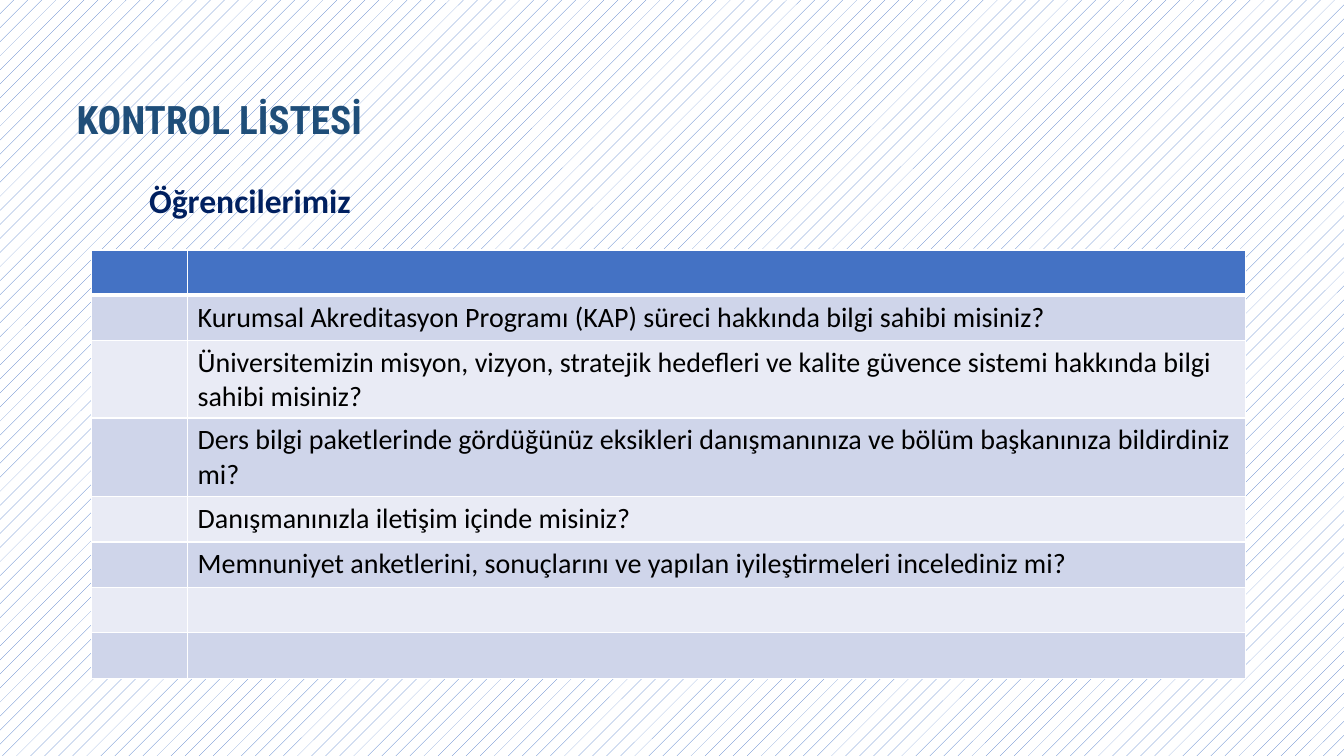
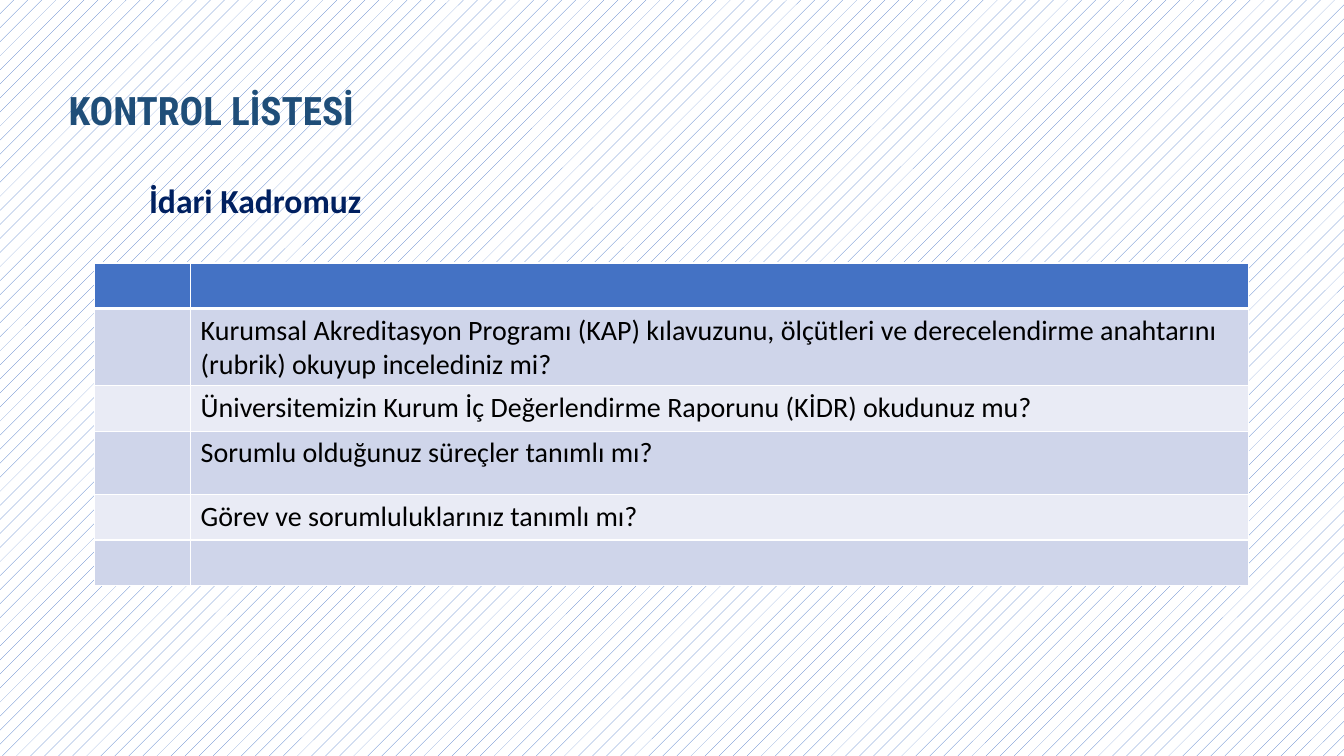
"""Build two checklist slides, each with a title, an audience heading and a table."""
from dataclasses import dataclass

from lxml import etree
from pptx import Presentation
from pptx.dml.color import RGBColor
from pptx.enum.dml import MSO_PATTERN
from pptx.enum.text import MSO_AUTO_SIZE, PP_ALIGN
from pptx.oxml.ns import qn
from pptx.util import Inches, Length, Pt

LEFT = PP_ALIGN.LEFT
GROW = MSO_AUTO_SIZE.SHAPE_TO_FIT_TEXT
DOTTED = MSO_PATTERN.PERCENT_5
TITLE_ONLY = 5


@dataclass(frozen=True)
class TextStyle:
    """Font, size, colour and weight of a piece of text."""
    name: str
    size: Length
    color: RGBColor
    bold: bool = False


@dataclass(frozen=True)
class Theme:
    """Colours, type styles and line widths shared by all slides."""
    title: TextStyle = TextStyle("Roboto Condensed", Pt(28), RGBColor.from_string("1F4E79"), True)
    heading: TextStyle = TextStyle("Calibri", Pt(24), RGBColor.from_string("002060"), True)
    body: TextStyle = TextStyle("Calibri", Pt(20), RGBColor.from_string("000000"))
    accent: RGBColor = RGBColor.from_string("4472C4")
    paper: RGBColor = RGBColor.from_string("FFFFFF")
    bands: tuple[RGBColor, RGBColor] = (RGBColor.from_string("CFD5EA"), RGBColor.from_string("E9EBF5"))
    thin: Length = Pt(1)
    thick: Length = Pt(3)


@dataclass(frozen=True)
class Row:
    """One checklist row; an empty text leaves room for a new item."""
    text: str = ""
    height: Length = Inches(0.45)


@dataclass(frozen=True)
class Checklist:
    """Contents of one slide and the places that differ between slides."""
    audience: str
    title_at: tuple[Length, Length]
    table_at: tuple[Length, Length]
    rows: tuple[Row, ...]


THEME = Theme()
TITLE = "KONTROL LİSTESİ"
COLUMNS = (Inches(0.95), Inches(10.49))
TWO_LINES = Inches(0.76)
TITLE_FORMAT = {"alignment": LEFT}
HEADING_FORMAT = {"alignment": LEFT, "line_spacing": 1.15, "space_before": Pt(6), "space_after": Pt(6)}

CHECKLISTS = (
    Checklist("Öğrencilerimiz", (Inches(0.66), Inches(0.89)), (Inches(0.91), Inches(2.48)), (
        Row(),
        Row("Kurumsal Akreditasyon Programı (KAP) süreci hakkında bilgi sahibi misiniz?"),
        Row("Üniversitemizin misyon, vizyon, stratejik hedefleri ve kalite güvence sistemi "
            "hakkında bilgi sahibi misiniz?", TWO_LINES),
        Row("Ders bilgi paketlerinde gördüğünüz eksikleri danışmanınıza ve bölüm başkanınıza "
            "bildirdiniz mi?", Inches(0.78)),
        Row("Danışmanınızla iletişim içinde misiniz?"),
        Row("Memnuniyet anketlerini, sonuçlarını ve yapılan iyileştirmeleri incelediniz mi?"),
        Row(),
        Row(),
    )),
    Checklist("İdari Kadromuz", (Inches(0.58), Inches(0.8)), (Inches(0.94), Inches(2.61)), (
        Row(),
        Row("Kurumsal Akreditasyon Programı (KAP) kılavuzunu, ölçütleri ve derecelendirme "
            "anahtarını (rubrik) okuyup incelediniz mi?", TWO_LINES),
        Row("Üniversitemizin Kurum İç Değerlendirme Raporunu (KİDR) okudunuz mu?"),
        Row("Sorumlu olduğunuz süreçler tanımlı mı?", Inches(0.63)),
        Row("Görev ve sorumluluklarınız tanımlı mı?"),
        Row(),
    )),
)


def apply(target, values: dict) -> None:
    """Set every named attribute on the target."""
    for name, value in values.items():
        setattr(target, name, value)


def write(frame, text: str, style: TextStyle, para_format: dict) -> None:
    """Write one styled paragraph into a text frame."""
    para = frame.paragraphs[0]
    apply(para, para_format)
    span = para.add_run()
    span.text = text
    apply(span.font, {"name": style.name, "size": style.size, "bold": style.bold})
    span.font.color.rgb = style.color


def fill_box(box, text: str, style: TextStyle, place: dict, para_format: dict) -> None:
    """Place a box that grows with its text, and write into it."""
    apply(box, place)
    apply(box.text_frame, {"word_wrap": True, "auto_size": GROW})
    write(box.text_frame, text, style, para_format)


def set_borders(cell, top: Length, bottom: Length) -> None:
    """Draw paper-coloured lines on all four sides of a cell."""
    properties = cell._tc.get_or_add_tcPr()
    widths = {"a:lnL": THEME.thin, "a:lnR": THEME.thin, "a:lnT": top, "a:lnB": bottom}
    for tag, width in widths.items():
        line = etree.SubElement(properties, qn(tag), w=str(int(width)))
        solid = etree.SubElement(line, qn("a:solidFill"))
        etree.SubElement(solid, qn("a:srgbClr"), val=str(THEME.paper))


def add_checklist_table(slide, checklist: Checklist) -> None:
    """Add the banded table with its header row and questions."""
    rows = checklist.rows
    height = Length(sum(row.height for row in rows))
    table = slide.shapes.add_table(
        len(rows), len(COLUMNS), *checklist.table_at, Length(sum(COLUMNS)), height).table
    for column, width in zip(table.columns, COLUMNS):
        column.width = width
    for index, row in enumerate(rows):
        table.rows[index].height = row.height
        top = THEME.thick if index == 1 else THEME.thin
        bottom = THEME.thick if index == 0 else THEME.thin
        for cell in table.rows[index].cells:
            set_borders(cell, top, bottom)
            cell.fill.solid()
            cell.fill.fore_color.rgb = THEME.bands[(index - 1) % 2] if index else THEME.accent
        if row.text:
            write(table.cell(index, 1).text_frame, row.text, THEME.body, {"alignment": LEFT})


def add_checklist_slide(deck, checklist: Checklist) -> None:
    """Add one slide with title, audience heading and table."""
    slide = deck.slides.add_slide(deck.slide_layouts[TITLE_ONLY])
    left, top = checklist.title_at
    title_place = {"left": left, "top": top, "width": Inches(6.14), "height": Inches(0.57)}
    fill_box(slide.shapes.title, TITLE, THEME.title, title_place, TITLE_FORMAT)
    heading = slide.shapes.add_textbox(Inches(1.38), Inches(1.68), Inches(10.51), Inches(0.54))
    fill_box(heading, checklist.audience, THEME.heading, {}, HEADING_FORMAT)
    add_checklist_table(slide, checklist)


def set_background(deck) -> None:
    """Give the slide master its patterned background."""
    fill = deck.slide_master.background.fill
    fill.patterned()
    fill.pattern = DOTTED
    fill.fore_color.rgb = THEME.accent
    fill.back_color.rgb = THEME.paper


def main() -> None:
    """Build and save the deck."""
    deck = Presentation()
    apply(deck, {"slide_width": Inches(13.33), "slide_height": Inches(7.5)})
    set_background(deck)
    for checklist in CHECKLISTS:
        add_checklist_slide(deck, checklist)
    deck.save("out.pptx")


if __name__ == "__main__":
    main()
